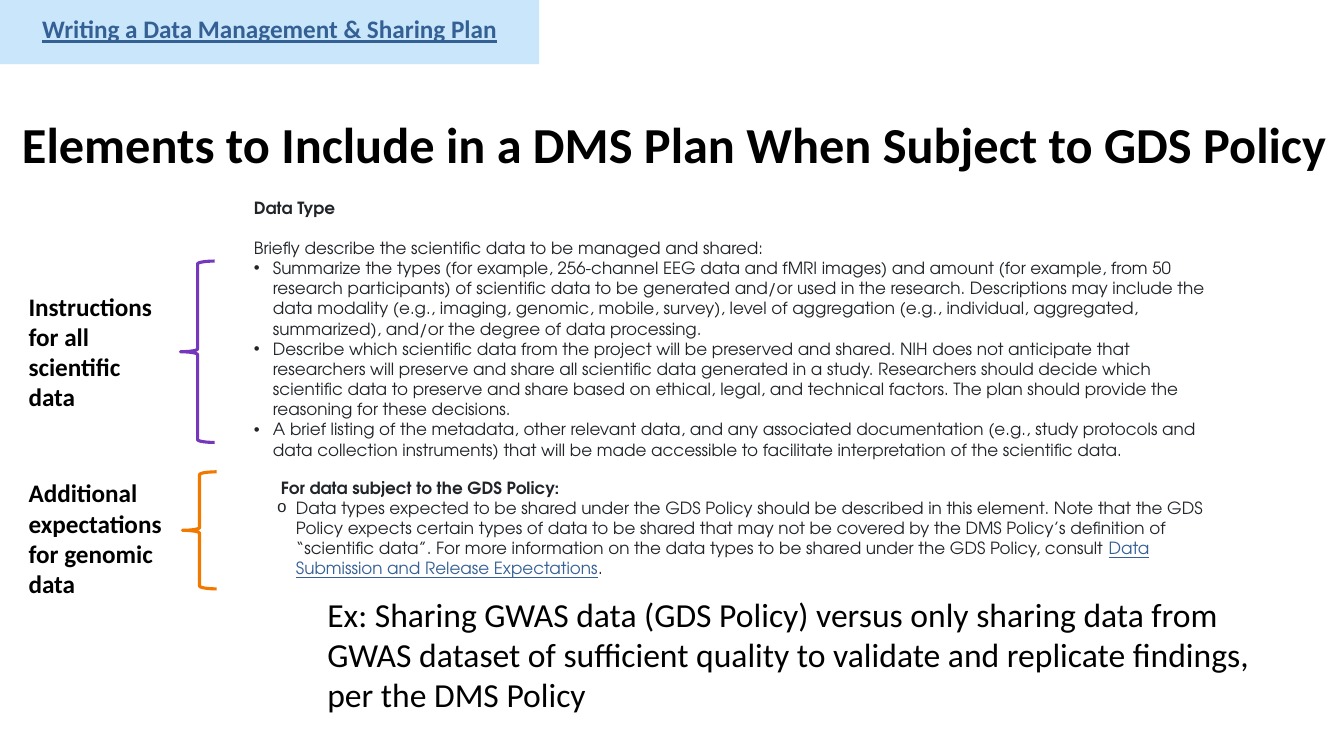
from lxml.etree import SubElement
from pptx import Presentation
from pptx.dml.color import RGBColor
from pptx.enum.shapes import MSO_SHAPE as Preset
from pptx.enum.text import MSO_ANCHOR as Anchor, MSO_AUTO_SIZE as AutoSize, PP_ALIGN as Align
from pptx.oxml.ns import qn
from pptx.util import Cm, Pt

BLACK = RGBColor(0x00, 0x00, 0x00)
INK = RGBColor(0x21, 0x25, 0x29)
LINK = RGBColor(0x34, 0x60, 0x94)
SKY = RGBColor(0xC9, 0xE6, 0xFB)
PURPLE = RGBColor(0x75, 0x38, 0xBC)
ORANGE = RGBColor(0xF2, 0x79, 0x00)

DATA_TYPE_BULLETS = [
    "Summarize the types (for example, 256-channel EEG data and fMRI images) and amount "
    "(for example, from 50 research participants) of scientific data to be generated and/or "
    "used in the research. Descriptions may include the data modality (e.g., imaging, genomic, "
    "mobile, survey), level of aggregation (e.g., individual, aggregated, summarized), and/or "
    "the degree of data processing.",
    "Describe which scientific data from the project will be preserved and shared. NIH does not "
    "anticipate that researchers will preserve and share all scientific data generated in a study. "
    "Researchers should decide which scientific data to preserve and share based on ethical, legal, "
    "and technical factors. The plan should provide the reasoning for these decisions.",
    "A brief listing of the metadata, other relevant data, and any associated documentation "
    "(e.g., study protocols and data collection instruments) that will be made accessible to "
    "facilitate interpretation of the scientific data.",
]
GDS_DETAIL = (
    "Data types expected to be shared under the GDS Policy should be described in this element. "
    "Note that the GDS Policy expects certain types of data to be shared that may not be covered "
    "by the DMS Policy’s definition of “scientific data”. For more information on the data types "
    "to be shared under the GDS Policy, consult\u00a0"
)
GWAS_EXAMPLE = (
    "Ex: Sharing GWAS data (GDS Policy) versus only sharing data from GWAS dataset of sufficient "
    "quality to validate and replicate findings, per the DMS Policy"
)


class PolicySlide:
    heading_font = "Calibri"
    policy_font = "TeX Gyre Adventor"

    def __init__(self, presentation):
        self.slide = presentation.slides.add_slide(presentation.slide_layouts[5])

    def set_text(self, paragraph, text, size=18, color=BLACK, bold=False, font=None,
                 bullet=None, margin=0, indent=0):
        properties = paragraph._p.get_or_add_pPr()
        properties.set("marL", str(Cm(margin)))
        properties.set("indent", str(Cm(indent)))
        if bullet:
            bullet_font = "Courier New" if bullet == "o" else "Arial"
            SubElement(properties, qn("a:buFont")).set("typeface", bullet_font)
            SubElement(properties, qn("a:buChar")).set("char", bullet)
        paragraph.add_run().text = text
        paragraph.font.name = font or self.heading_font
        paragraph.font.size = Pt(size)
        paragraph.font.bold = bold
        paragraph.font.color.rgb = color
        return paragraph

    def policy_text(self, paragraph, text, **style):
        return self.set_text(paragraph, text, 12, INK, font=self.policy_font, **style)

    def policy_bullet(self, frame, text, bullet):
        return self.policy_text(frame.add_paragraph(), text, bullet=bullet, margin=0.48, indent=-0.48)

    def title(self, text, left, top, width, height):
        title = self.slide.shapes.title
        title.left, title.top, title.width, title.height = map(Cm, (left, top, width, height))
        frame = title.text_frame
        frame.auto_size = AutoSize.NONE
        frame.vertical_anchor = Anchor.MIDDLE
        self.set_text(frame.paragraphs[0], text, 36, bold=True).alignment = Align.LEFT

    def shape(self, preset, left, top, width, height):
        shape = self.slide.shapes.add_shape(preset, *map(Cm, (left, top, width, height)))
        shape.shadow.inherit = False
        return shape

    def banner(self, text, left, top, width, height):
        banner = self.shape(Preset.RECTANGLE, left, top, width, height)
        banner.fill.solid()
        banner.fill.fore_color.rgb = SKY
        banner.line.fill.background()
        paragraph = self.set_text(banner.text_frame.paragraphs[0], text, color=LINK, bold=True)
        paragraph.alignment = Align.CENTER
        paragraph.font.underline = True

    def brace(self, color, left, top, width, height):
        brace = self.shape(Preset.LEFT_BRACE, left, top, width, height)
        brace.fill.background()
        brace.line.color.rgb = color
        brace.line.width = Pt(2.25)

    def text_box(self, left, top, width, height):
        frame = self.slide.shapes.add_textbox(*map(Cm, (left, top, width, height))).text_frame
        frame.word_wrap = True
        return frame

    def label(self, text, left, top, width, height):
        frame = self.text_box(left, top, width, height)
        self.set_text(frame.paragraphs[0], text, bold=True)

    def data_type(self, left, top, width, height):
        frame = self.text_box(left, top, width, height)
        self.policy_text(frame.paragraphs[0], "Data Type", bold=True)
        introduction = self.policy_text(
            frame.add_paragraph(), "Briefly describe the scientific data to be managed and shared:")
        introduction.space_before = Pt(14.4)
        for text in DATA_TYPE_BULLETS:
            self.policy_bullet(frame, text, "•")

    def gds_policy(self, left, top, width, height):
        frame = self.text_box(left, top, width, height)
        self.policy_text(frame.paragraphs[0], "For data subject to the GDS Policy:", bold=True, margin=0.1)
        detail = self.policy_bullet(frame, GDS_DETAIL, "o")
        link = detail.add_run()
        link.text = "Data Submission and Release Expectations"
        link.font.color.rgb = LINK
        link.font.underline = True
        detail.add_run().text = "."

    def example(self, text, left, top, width, height):
        frame = self.text_box(left, top, width, height)
        self.set_text(frame.paragraphs[0], text, 24, margin=1.27)


def main():
    presentation = Presentation()
    presentation.slide_width = Cm(33.87)
    presentation.slide_height = Cm(19.05)
    page = PolicySlide(presentation)
    page.title("Elements to Include in a DMS Plan When Subject to GDS Policy", 0.3, 2.03, 33.57, 3.18)
    page.banner("Writing a Data Management & Sharing Plan", 0, -0.18, 13.59, 1.8)
    page.brace(PURPLE, 4.55, 6.58, 0.86, 4.57)
    page.label("Instructions for all scientific data", 0.47, 7.21, 3.66, 3.33)
    page.brace(ORANGE, 4.6, 11.89, 0.86, 2.95)
    page.label("Additional expectations for genomic data", 0.47, 11.91, 3.94, 3.33)
    page.data_type(6.15, 4.85, 24.59, 6.4)
    page.gds_policy(6.73, 11.91, 24.13, 2.82)
    page.example(GWAS_EXAMPLE, 6.73, 14.83, 25.07, 3.33)
    presentation.save("out.pptx")


if __name__ == "__main__":
    main()
